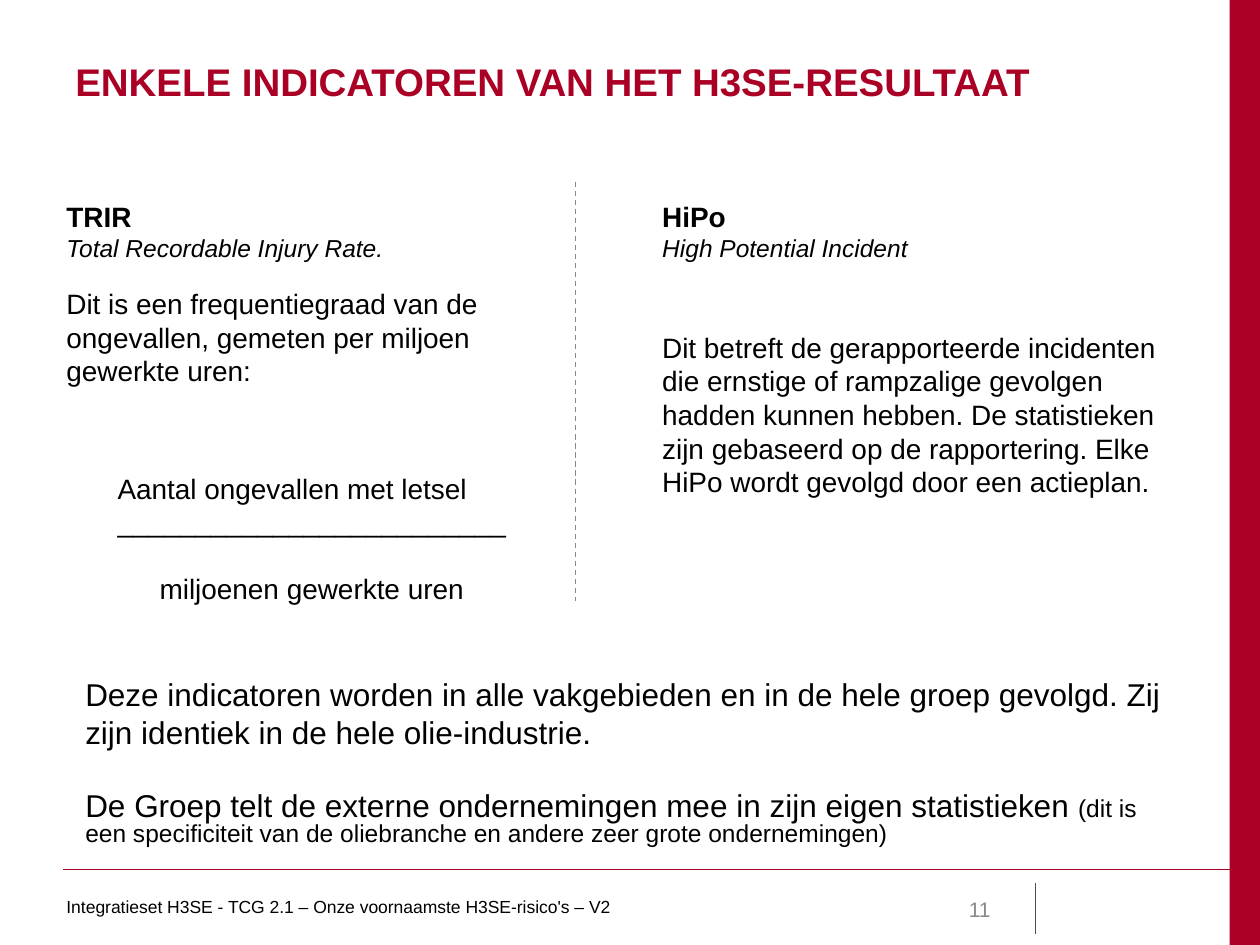
from pptx import Presentation
from pptx.dml.color import RGBColor
from pptx.enum.dml import MSO_LINE
from pptx.enum.shapes import MSO_CONNECTOR, MSO_SHAPE
from pptx.enum.text import MSO_ANCHOR, PP_ALIGN
from pptx.oxml.ns import qn
from pptx.util import Cm, Pt
from lxml import etree

TOP, MID = MSO_ANCHOR.TOP, MSO_ANCHOR.MIDDLE
LEFT, RIGHT, CENTER = PP_ALIGN.LEFT, PP_ALIGN.RIGHT, PP_ALIGN.CENTER
DASH, SOLID = MSO_LINE.DASH, MSO_LINE.SOLID
RECT, STRAIGHT = MSO_SHAPE.RECTANGLE, MSO_CONNECTOR.STRAIGHT

THEME = {
    "font": "Arial",
    "red": "AA0025", "black": "000000", "grey": "898989", "dark": "4D4D4D",
    "title": 22, "lead": 18, "body": 16, "sub": 14, "page": 12, "foot": 10,
}

WIDTH, HEIGHT = 25.4, 19.05
BAND = 0.61
EDGE = WIDTH - BAND

TITLE = [{"runs": [("ENKELE INDICATOREN VAN HET H3SE-RESULTAAT",
                    {"size": "title", "bold": True, "color": "red"})]}]

TRIR = [
    {"runs": [("TRIR", {"bold": True})]},
    {"runs": [("Total Recordable Injury Rate.", {"size": "sub", "italic": True})]},
    {"runs": [("Dit is een frequentiegraad van de ongevallen, gemeten per miljoen "
               "gewerkte uren:", {})], "before": 14},
    {"runs": [("Aantal ongevallen met letsel _________________________", {})],
     "before": 48, "indent": 1.03},
    {"runs": [("miljoenen gewerkte uren", {})], "before": 19, "align": CENTER},
]

HIPO = [
    {"runs": [("HiPo", {"bold": True})]},
    {"runs": [("High Potential Incident", {"size": "sub", "italic": True})]},
    {"runs": [("Dit betreft de gerapporteerde incidenten die ernstige of rampzalige "
               "gevolgen hadden kunnen hebben. De statistieken zijn gebaseerd op de "
               "rapportering. Elke HiPo wordt gevolgd door een actieplan.", {})],
     "before": 39},
]

GROUP = [
    {"runs": [("Deze indicatoren worden in alle vakgebieden en in de hele groep "
               "gevolgd. Zij zijn identiek in de hele olie-industrie.",
               {"size": "lead"})], "after": 6},
    {"runs": [("De Groep telt de externe ondernemingen mee in zijn eigen statistieken ",
               {"size": "lead"}),
              ("(dit is een specificiteit van de oliebranche en andere zeer grote "
               "ondernemingen)", {"size": "sub"})], "before": 18, "space": 0.8},
]

FOOT = [{"runs": [("Integratieset H3SE - TCG 2.1 – Onze voornaamste H3SE-risico's – V2",
                   {"size": "foot"})]}]
PAGE = [{"runs": [("11", {"size": "page", "color": "grey"})], "align": RIGHT}]

BOXES = [
    (PAGE, (18.21, 17.81, 2.01, 1.02), MID),
    (TRIR, (1.09, 3.89, 10.39, 9.63), TOP),
    (HIPO, (13.1, 3.89, 11, 7.75), TOP),
    (GROUP, (1.47, 13.49, 22.4, 4.55), TOP),
    (TITLE, (1.27, 0.76, 22.83, 1.75), MID),
    (FOOT, (1.09, 17.93, 18.44, 1.02), TOP),
]

LINES = [
    ((1.27, 17.53, EDGE, 17.53), "red", 0.75, SOLID),
    ((20.88, 17.81, 20.88, 18.82), "dark", 0.5, SOLID),
    ((11.6, 3.66, 11.6, 12.12), "grey", 0.75, DASH),
]


def tint(name):
    return RGBColor.from_string(THEME[name])


def add_run(para, text, size="body", color="black", bold=False, italic=False):
    run = para.add_run()
    run.text = text
    font = run.font
    font.name, font.size = THEME["font"], Pt(THEME[size])
    font.bold, font.italic = bold, italic
    font.color.rgb = tint(color)


def add_box(slide, paras, place, anchor):
    frame = slide.shapes.add_textbox(*map(Cm, place)).text_frame
    frame.word_wrap = True
    frame.vertical_anchor = anchor
    for num, item in enumerate(paras):
        para = frame.add_paragraph() if num else frame.paragraphs[0]
        para.alignment = item.get("align", LEFT)
        para.space_before = Pt(item.get("before", 0))
        para.space_after = Pt(item.get("after", 0))
        para.line_spacing = item.get("space", 1.0)
        if "indent" in item:
            props = para._p.get_or_add_pPr()
            props.set("marL", str(Cm(item["indent"])))
            props.set("indent", "0")
        for text, style in item["runs"]:
            add_run(para, text, **style)


def add_line(slide, ends, color, width, dash):
    line = slide.shapes.add_connector(STRAIGHT, *map(Cm, ends))
    line.line.color.rgb = tint(color)
    line.line.width = Pt(width)
    line.line.dash_style = dash
    etree.SubElement(line._element.spPr, qn("a:effectLst"))


def add_band(slide):
    band = slide.shapes.add_shape(RECT, Cm(EDGE), 0, Cm(BAND), Cm(HEIGHT))
    band.shadow.inherit = False
    band.fill.solid()
    band.fill.fore_color.rgb = tint("red")
    band.line.fill.background()


def main():
    deck = Presentation()
    deck.slide_width, deck.slide_height = Cm(WIDTH), Cm(HEIGHT)
    slide = deck.slides.add_slide(deck.slide_layouts[6])
    add_band(slide)
    for line in LINES:
        add_line(slide, *line)
    for box in BOXES:
        add_box(slide, *box)
    deck.save("out.pptx")


if __name__ == "__main__":
    main()
